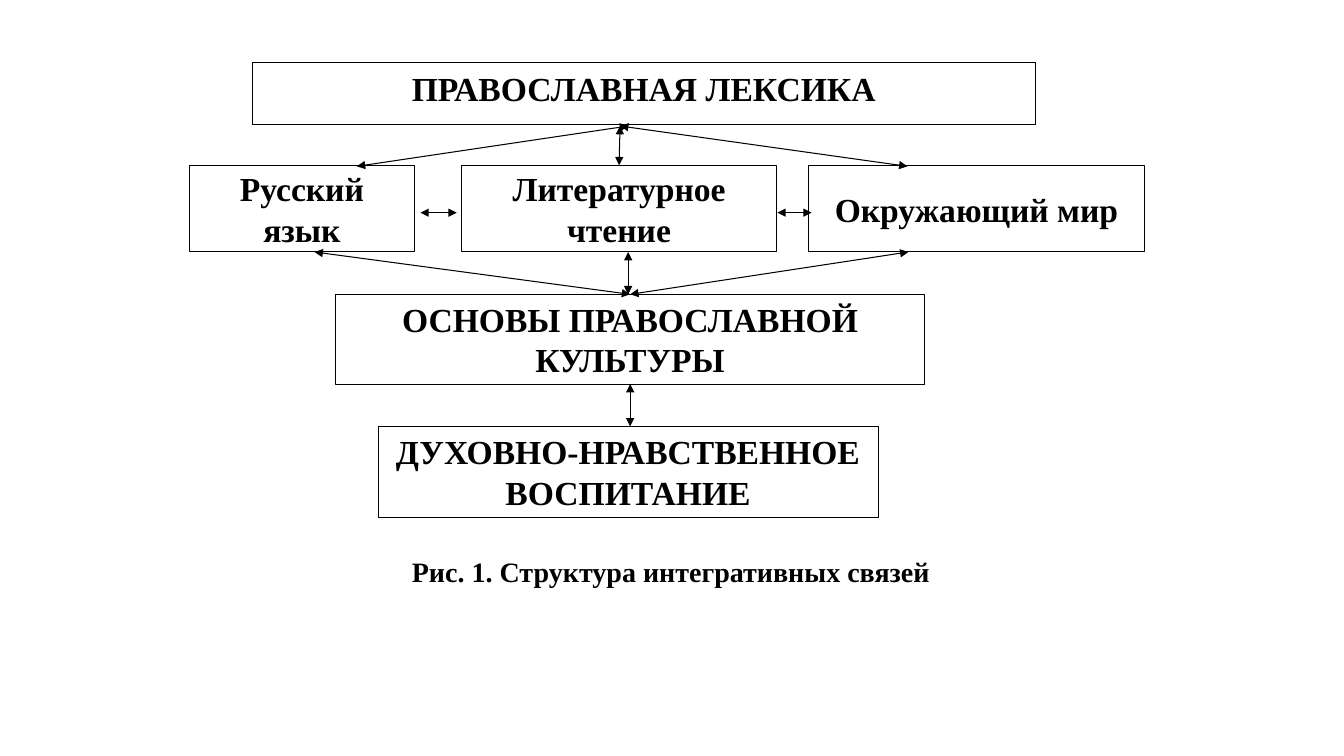
from pptx import Presentation
from pptx.dml.color import RGBColor
from pptx.enum.shapes import MSO_CONNECTOR as Connector, MSO_SHAPE as Shape
from pptx.enum.text import MSO_ANCHOR as Anchor, MSO_AUTO_SIZE as AutoSize, PP_ALIGN as Align
from pptx.oxml.ns import qn
from pptx.util import Inches, Pt
from lxml.etree import SubElement

FONT, BLACK, WHITE = "Times New Roman", "000000", "FFFFFF"
TOP, BOTTOM = 0, 2

# Content: name -> text, (left, top, width, height), anchor
BOXES = {
    "lexicon": ("ПРАВОСЛАВНАЯ ЛЕКСИКА", (2.5, 0.62, 7.77, 0.62), Anchor.TOP),
    "language": ("Русский язык", (1.88, 1.64, 2.23, 0.86), Anchor.MIDDLE),
    "reading": ("Литературное чтение", (4.58, 1.64, 3.12, 0.86), Anchor.MIDDLE),
    "world": ("Окружающий мир", (8.02, 1.64, 3.33, 0.86), Anchor.MIDDLE),
    "culture": ("ОСНОВЫ ПРАВОСЛАВНОЙ КУЛЬТУРЫ", (3.33, 2.92, 5.84, 0.89), Anchor.MIDDLE),
    "upbringing": ("ДУХОВНО-НРАВСТВЕННОЕ ВОСПИТАНИЕ", (3.75, 4.23, 4.96, 0.9), Anchor.MIDDLE),
}
CAPTION = ("Рис. 1. Структура интегративных связей", (1.46, 5.45, 9.9, 0.44))

# Arrows: start, end, joined box and side at the start, the same at the end
ARROWS = [
    ((4.17, 2.11), (4.53, 2.11), None, None),
    ((8.05, 2.11), (7.71, 2.11), None, None),
    ((6.15, 1.25), (6.15, 1.65), None, ("reading", TOP)),
    ((6.23, 1.25), (3.54, 1.65), None, None),
    ((6.15, 1.25), (9.0, 1.65), None, None),
    ((3.12, 2.5), (6.25, 2.92), None, ("culture", TOP)),
    ((9.01, 2.5), (6.25, 2.92), None, ("culture", TOP)),
    ((6.23, 2.5), (6.23, 2.92), None, None),
    ((6.25, 3.81), (6.25, 4.23), ("culture", BOTTOM), None),
]


def color(value):
    return RGBColor.from_string(value)


def inches(values):
    return [Inches(value) for value in values]


def write(box, text, size, anchor):
    frame = box.text_frame
    frame.word_wrap = True
    frame.vertical_anchor = anchor
    para = frame.paragraphs[0]
    para.text = text
    para.alignment = Align.CENTER
    para.font.name, para.font.size, para.font.bold = FONT, Pt(size), True
    para.font.color.rgb = color(BLACK)
    return para


def set_line(item):
    item.line.color.rgb = color(BLACK)
    item.line.width = Pt(0.75)


def add_box(page, text, place, anchor):
    box = page.shapes.add_shape(Shape.RECTANGLE, *inches(place))
    box.shadow.inherit = False
    box.fill.solid()
    box.fill.fore_color.rgb = color(WHITE)
    set_line(box)
    write(box, text, 24, anchor)
    return box


def add_arrow(page, boxes, start, end, start_join, end_join):
    arrow = page.shapes.add_connector(Connector.STRAIGHT, *inches(start + end))
    if start_join:
        arrow.begin_connect(boxes[start_join[0]], start_join[1])
    if end_join:
        arrow.end_connect(boxes[end_join[0]], end_join[1])
    set_line(arrow)
    outline = arrow.line._get_or_add_ln()
    for tag in ("a:headEnd", "a:tailEnd"):
        SubElement(outline, qn(tag), type="triangle")
    SubElement(arrow._element.spPr, qn("a:effectLst"))


def main():
    deck = Presentation()
    deck.slide_width, deck.slide_height = Inches(13.33), Inches(7.5)
    page = deck.slides.add_slide(deck.slide_layouts[6])

    # Boxes and the arrows between them
    boxes = {name: add_box(page, *content) for name, content in BOXES.items()}
    for arrow in ARROWS:
        add_arrow(page, boxes, *arrow)

    # Caption with a first-line indent
    text, place = CAPTION
    caption = page.shapes.add_textbox(*inches(place))
    para = write(caption, text, 20, Anchor.MIDDLE)
    para._p.get_or_add_pPr().set("indent", str(Inches(0.49)))
    caption.text_frame.auto_size = AutoSize.SHAPE_TO_FIT_TEXT

    deck.save("out.pptx")


if __name__ == "__main__":
    main()
